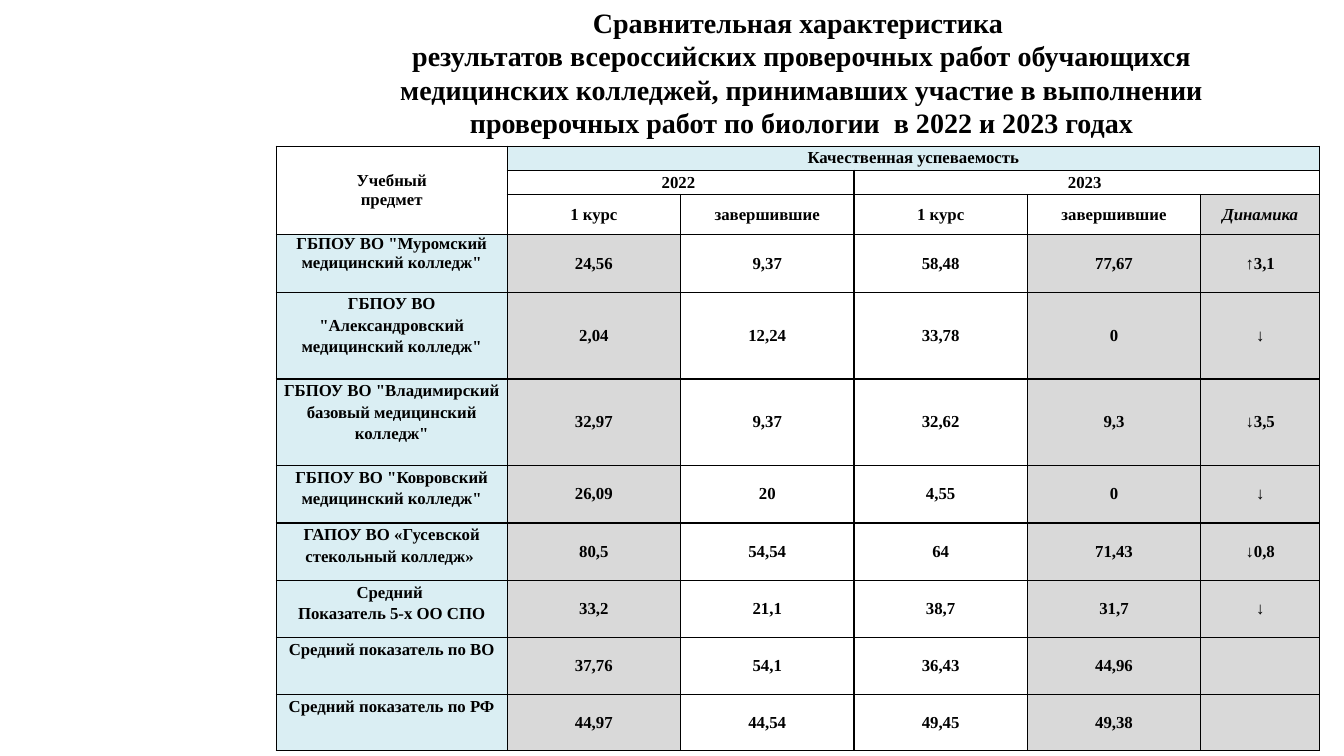
from lxml.etree import SubElement
from pptx import Presentation
from pptx.dml.color import RGBColor
from pptx.enum.text import MSO_ANCHOR, MSO_AUTO_SIZE, PP_ALIGN
from pptx.oxml.ns import qn
from pptx.util import Inches, Pt

WIDTH, HEIGHT = Inches(13.33), Inches(7.5)
BLACK = RGBColor(0x00, 0x00, 0x00)
WHITE = RGBColor(0xFF, 0xFF, 0xFF)
BLUE = RGBColor(0xDA, 0xEE, 0xF3)
GRAY = RGBColor(0xD9, 0xD9, 0xD9)
FONT = "Times New Roman"

TITLE = (
    "Сравнительная характеристика \n"
    "результатов всероссийских проверочных работ обучающихся медицинских "
    "колледжей, принимавших участие в выполнении проверочных работ "
    "по биологии  в 2022 и 2023 годах"
)
COLUMN_SHARES = [2.29, 1.72, 1.72, 1.72, 1.72, 1.18]
ROW_SHARES = [0.24, 0.24, 0.34, 0.57, 0.86, 0.86, 0.57, 0.57, 0.57, 0.56, 0.56]
COLUMN_FILLS = [BLUE, GRAY, None, None, GRAY, GRAY]
SPANS = [
    (0, 0, 2, 0, "Учебный\nпредмет", None),
    (0, 1, 0, 5, "Качественная успеваемость", BLUE),
    (1, 1, 1, 2, "2022 ", WHITE),
    (1, 3, 1, 5, "2023 ", WHITE),
]
SUBHEADS = ["1 курс", "завершившие", "1 курс", "завершившие", "Динамика"]
RESULTS = [
    ('ГБПОУ ВО "Муромский медицинский колледж"', "24,56", "9,37", "58,48", "77,67", "↑3,1"),
    ('ГБПОУ ВО "Александровский медицинский колледж"', "2,04", "12,24", "33,78", "0", "↓"),
    ('ГБПОУ ВО "Владимирский базовый медицинский колледж"', "32,97", "9,37", "32,62", "9,3", "↓3,5"),
    ('ГБПОУ ВО "Ковровский медицинский колледж"', "26,09", "20", "4,55", "0", "↓"),
    ("ГАПОУ ВО «Гусевской стекольный колледж» ", "80,5", "54,54", "64", "71,43", "↓0,8"),
    ("Средний \nПоказатель 5-х ОО СПО", "33,2", "21,1", "38,7", "31,7", "↓"),
    ("Средний показатель по ВО", "37,76", "54,1", "36,43", "44,96", ""),
    ("Средний показатель по РФ", "44,97", "44,54", "49,45", "49,38", ""),
]


def write(tf, text, size, italic=False, spacing=None):
    tf.text = text
    for p in tf.paragraphs:
        p.alignment = PP_ALIGN.CENTER
        if spacing:
            p.line_spacing = spacing
        for r in p.runs:
            r.font.name = FONT
            r.font.size = Pt(size)
            r.font.bold = True
            r.font.italic = italic
            r.font.color.rgb = BLACK


def add_title(s):
    sp = s.shapes.title
    sp.left, sp.top = round(WIDTH * 0.2626), 0
    sp.width, sp.height = round(WIDTH * 0.6677), round(HEIGHT * 0.1933)
    tf = sp.text_frame
    tf.word_wrap = True
    tf.vertical_anchor = MSO_ANCHOR.TOP
    tf.auto_size = MSO_AUTO_SIZE.SHAPE_TO_FIT_TEXT
    write(tf, TITLE, 20)


def add_borders(cell):
    tcPr = cell._tc.get_or_add_tcPr()
    for index, side in enumerate(("lnL", "lnR", "lnT", "lnB")):
        line = SubElement(tcPr, qn(f"a:{side}"), w=str(Pt(1)))
        fill = SubElement(line, qn("a:solidFill"))
        SubElement(fill, qn("a:srgbClr"), val=str(BLACK))
        tcPr.insert(index, line)


def fill_cell(cell, text, color, anchor=MSO_ANCHOR.MIDDLE, **style):
    if color is None:
        cell.fill.background()
    else:
        cell.fill.solid()
        cell.fill.fore_color.rgb = color
    if text:
        cell.vertical_anchor = anchor
        write(cell.text_frame, text, 12, **style)


def add_header(table):
    for top, left, bottom, right, text, color in SPANS:
        cell = table.cell(top, left)
        cell.merge(table.cell(bottom, right))
        fill_cell(cell, text, color)
    for column, text in enumerate(SUBHEADS, 1):
        last = column == len(SUBHEADS)
        fill_cell(table.cell(2, column), text, GRAY if last else None, italic=last)


def add_results(table):
    for row, values in enumerate(RESULTS, 3):
        for column, (text, color) in enumerate(zip(values, COLUMN_FILLS)):
            cell = table.cell(row, column)
            if column == 0:
                fill_cell(cell, text, color, MSO_ANCHOR.TOP, spacing=1.15 if row > 3 else None)
            else:
                fill_cell(cell, text, color)


def add_results_table(s):
    width, height = round(WIDTH * 0.7764), round(HEIGHT * 0.792)
    table = s.shapes.add_table(
        len(ROW_SHARES), len(COLUMN_SHARES),
        round(WIDTH * 0.2056), round(HEIGHT * 0.1933), width, height,
    ).table
    table.first_row = table.horz_banding = False
    for column, share in zip(table.columns, COLUMN_SHARES):
        column.width = round(width * share / sum(COLUMN_SHARES))
    for row, share in zip(table.rows, ROW_SHARES):
        row.height = round(height * share / sum(ROW_SHARES))
    for cell in table.iter_cells():
        cell.margin_left = cell.margin_right = Inches(0.04)
        cell.margin_top = cell.margin_bottom = 0
        cell.fill.background()
        add_borders(cell)
    add_header(table)
    add_results(table)


def main():
    prs = Presentation()
    prs.slide_width, prs.slide_height = WIDTH, HEIGHT
    s = prs.slides.add_slide(prs.slide_layouts[5])
    add_title(s)
    add_results_table(s)
    prs.save("out.pptx")


if __name__ == "__main__":
    main()
